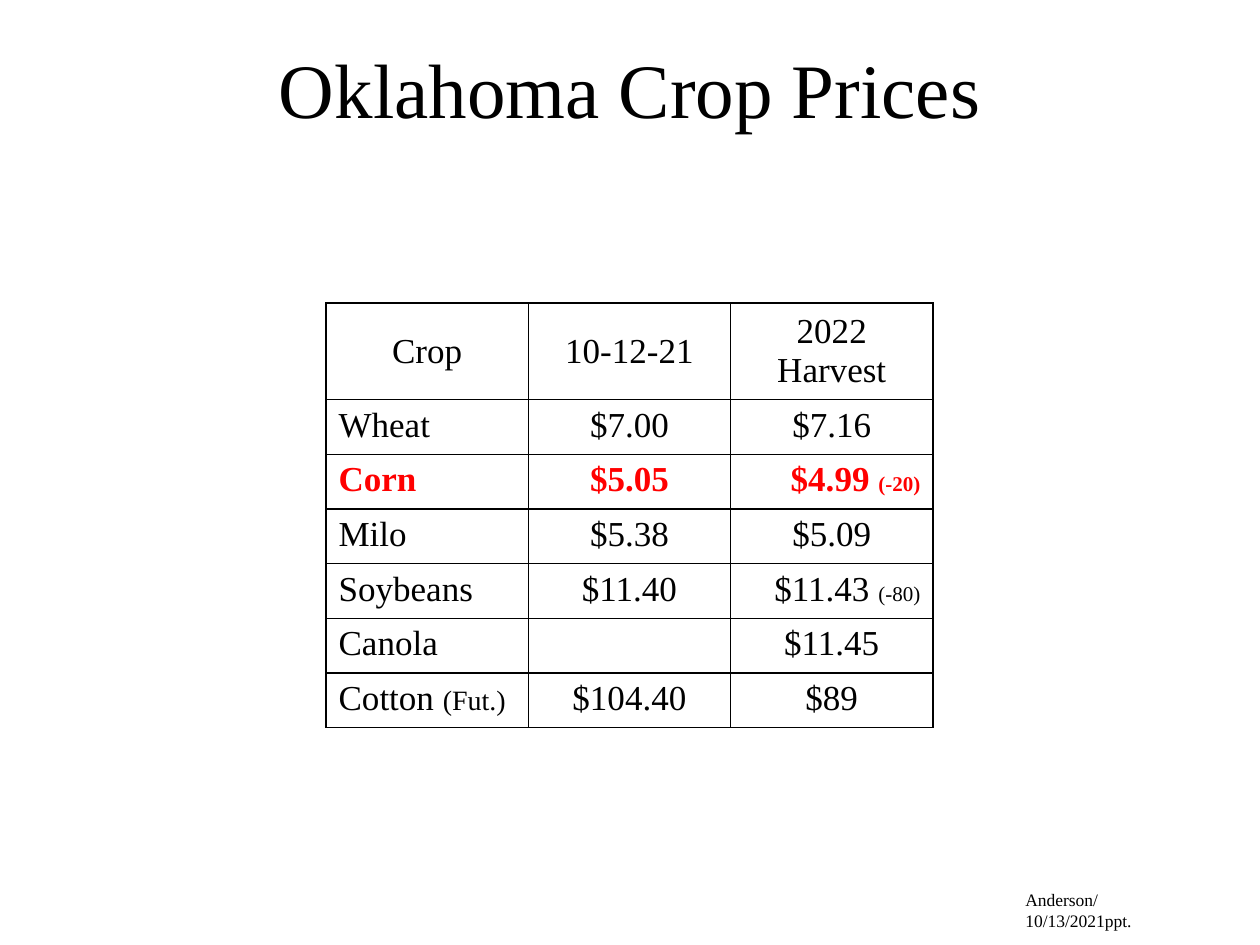
from lxml import etree
from pptx import Presentation
from pptx.dml.color import RGBColor
from pptx.enum.text import MSO_ANCHOR, PP_ALIGN
from pptx.oxml.ns import qn
from pptx.util import Emu, Pt

PX = 914400 // 126
LEFT, CENTER, RIGHT = PP_ALIGN.LEFT, PP_ALIGN.CENTER, PP_ALIGN.RIGHT
MIDDLE, TOP = MSO_ANCHOR.MIDDLE, MSO_ANCHOR.TOP
FONT = "Times New Roman"
COLORS = {"text": "000000", "border": "000000", "alert": "FF0000"}

HEADER = ["Crop", "10-12-21", "2022 Harvest"]
# Each cell holds the main text and, where needed, a small note with its size
PRICES = [
    ["Wheat", "$7.00", "$7.16"],
    ["Corn", "$5.05", ("$4.99 ", "(-20)", 12)],
    ["Milo", "$5.38", "$5.09"],
    ["Soybeans", "$11.40", ("$11.43 ", "(-80)", 12)],
    ["Canola", "", "$11.45"],
    [("Cotton ", "(Fut.)", 16), "$104.40", "$89"],
]
HIGHLIGHT = "Corn"


def px(*values):
    return [Emu(v * PX) for v in values]


def add_text(p, text, size=20, color="text", bold=False, align=LEFT):
    p.alignment = align
    r = p.add_run()
    r.text = text
    r.font.name = FONT
    r.font.size = Pt(size)
    r.font.bold = bold
    r.font.color.rgb = RGBColor.from_string(COLORS[color])


def add_title(s, text):
    title = s.shapes.title
    title.left, title.top, title.width, title.height = px(63, 9, 1134, 157)
    tf = title.text_frame
    tf.word_wrap = True
    tf.vertical_anchor = MIDDLE
    add_text(tf.paragraphs[0], text, size=44, align=CENTER)


def set_borders(cell):
    tc_pr = cell._tc.get_or_add_tcPr()
    for side in ("a:lnL", "a:lnR", "a:lnT", "a:lnB"):
        ln = etree.SubElement(tc_pr, qn(side), w=str(Pt(1)))
        fill = etree.SubElement(ln, qn("a:solidFill"))
        etree.SubElement(fill, qn("a:srgbClr"), val=COLORS["border"])


def fill_cell(cell, content, align, anchor=TOP, **fmt):
    set_borders(cell)
    cell.fill.background()
    cell.vertical_anchor = anchor
    text, *note = content if isinstance(content, tuple) else (content,)
    p = cell.text_frame.paragraphs[0]
    if text:
        add_text(p, text, align=align, **fmt)
    if note:
        add_text(p, note[0], size=note[1], align=align, **fmt)


def add_price_table(s):
    x, y, w, header_h, row_h = px(326, 303, 607, 90, 51)
    rows, cols = len(PRICES) + 1, len(HEADER)
    table = s.shapes.add_table(rows, cols, x, y, w,
                               header_h + row_h * len(PRICES)).table
    table.first_row = table.horz_banding = False
    for i, row in enumerate(table.rows):
        row.height = row_h if i else header_h

    for c, text in enumerate(HEADER):
        fill_cell(table.cell(0, c), text, CENTER, MIDDLE)
    for r, row in enumerate(PRICES, 1):
        marked = row[0] == HIGHLIGHT
        for c, content in enumerate(row):
            # Prices with a note are set flush right
            noted = isinstance(content, tuple)
            align = LEFT if c == 0 else RIGHT if noted else CENTER
            fill_cell(table.cell(r, c), content, align, bold=marked,
                      color="alert" if marked else "text")


def add_footer(s, *lines):
    tf = s.shapes.add_textbox(*px(1013, 883, 198, 34)).text_frame
    tf.word_wrap = True
    p = tf.paragraphs[0]
    for i, line in enumerate(lines):
        if i:
            p.add_line_break()
        add_text(p, line, size=10)


def main():
    prs = Presentation()
    prs.slide_width, prs.slide_height = px(1260, 945)
    s = prs.slides.add_slide(prs.slide_layouts[5])  # title only
    add_footer(s, "Anderson/", "10/13/2021ppt.")
    add_title(s, "Oklahoma Crop Prices")
    add_price_table(s)
    prs.save("out.pptx")


if __name__ == "__main__":
    main()
